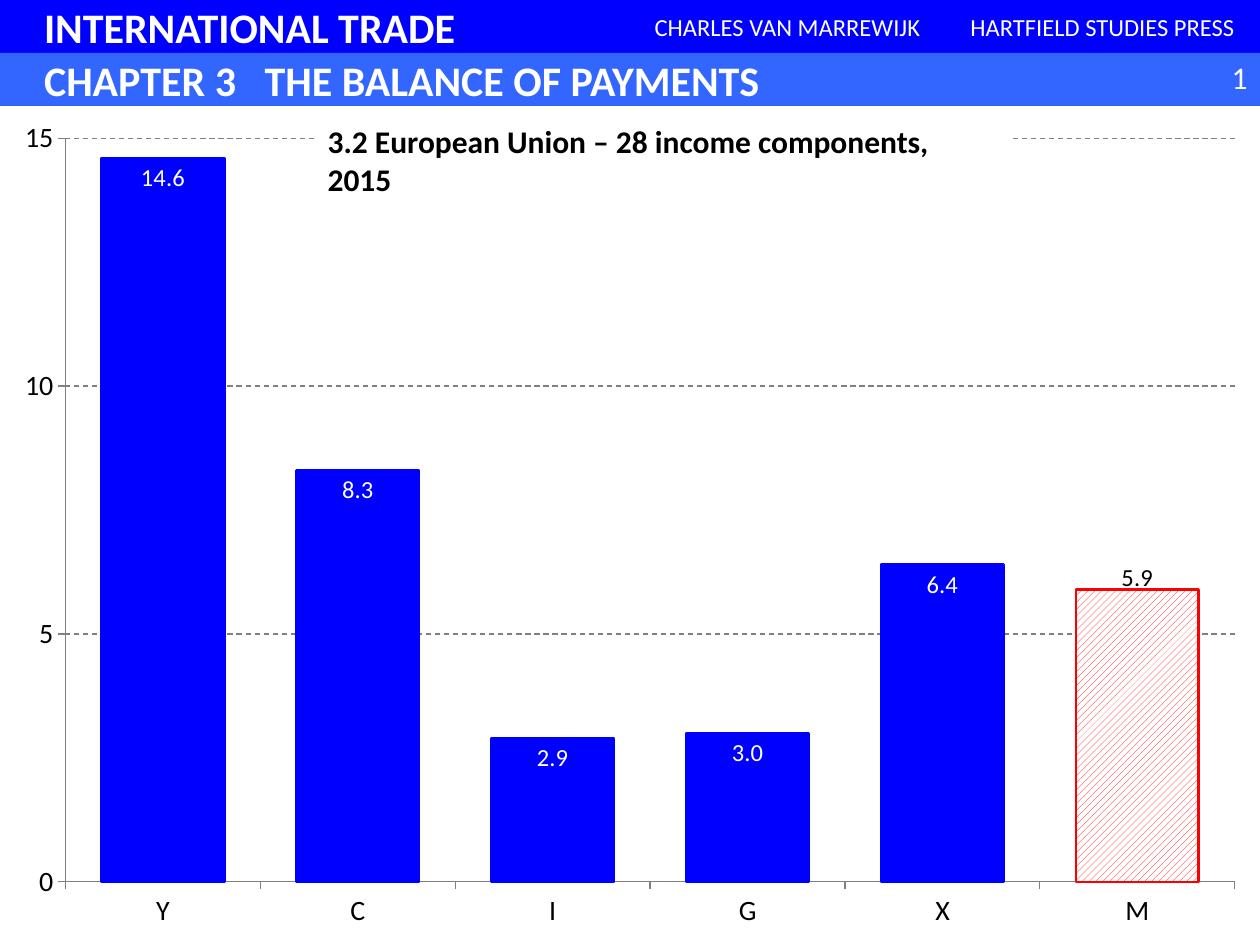
from dataclasses import dataclass

from pptx import Presentation
from pptx.chart.data import CategoryChartData
from pptx.dml.color import RGBColor as RGB
from pptx.enum.chart import XL_CHART_TYPE as Kind, XL_LABEL_POSITION as Pos
from pptx.enum.dml import MSO_LINE as Dash, MSO_PATTERN as Pattern
from pptx.enum.shapes import MSO_SHAPE as Shape
from pptx.enum.text import MSO_ANCHOR as Anchor, MSO_AUTO_SIZE as Fit, PP_ALIGN as Align
from pptx.oxml import parse_xml
from pptx.oxml.ns import nsdecls, qn
from pptx.util import Inches, Pt


@dataclass
class Theme:
    face: str = "Calibri"
    blue: RGB = RGB(0x00, 0x00, 0xFF)
    sky: RGB = RGB(0x33, 0x66, 0xFF)
    red: RGB = RGB(0xFF, 0x00, 0x00)
    white: RGB = RGB(0xFF, 0xFF, 0xFF)
    black: RGB = RGB(0x00, 0x00, 0x00)
    gray: RGB = RGB(0x80, 0x80, 0x80)
    head: Pt = Pt(24)
    title: Pt = Pt(18)
    axis: Pt = Pt(16)
    small: Pt = Pt(14)


theme = Theme()


def style(font, size, color, bold=False):
    font.name, font.size, font.bold = theme.face, size, bold
    font.color.rgb = color


def add_band(left, top, width, text, fill, size, bold, align, margin):
    band = slide.shapes.add_shape(
        Shape.RECTANGLE, Inches(left), Inches(top), Inches(width), Inches(0.42))
    band.shadow.inherit = False
    band.fill.solid()
    band.fill.fore_color.rgb = fill
    band.line.fill.background()
    frame = band.text_frame
    frame.text = text
    frame.vertical_anchor = Anchor.MIDDLE
    frame.margin_left = Inches(margin)
    para = frame.paragraphs[0]
    para.alignment = align
    style(para.runs[0].font, size, theme.white, bold)
    return para


deck = Presentation()
deck.slide_width, deck.slide_height = Inches(10), Inches(7.5)
slide = deck.slides.add_slide(deck.slide_layouts[5])

# Header bands
add_band(0, 0, 10, "INTERNATIONAL TRADE", theme.blue, theme.head, True, Align.LEFT, 0.35)
for left, name in ((5, "CHARLES VAN MARREWIJK"), (7.5, "HARTFIELD STUDIES PRESS")):
    add_band(left, 0, 2.5, name, theme.blue, theme.small, False, Align.CENTER, 0.1)
chapter = add_band(0, 0.42, 10, "CHAPTER 3\tTHE BALANCE OF PAYMENTS",
                   theme.sky, theme.head, True, Align.LEFT, 0.35)
tabs = parse_xml(f'<a:tabLst {nsdecls("a")}><a:tab pos="{Inches(1.75)}" algn="l"/></a:tabLst>')
chapter._p.get_or_add_pPr().append(tabs)

# Page number
page = slide.shapes.add_textbox(Inches(9.33), Inches(0.41), Inches(0.67), Inches(0.4))
page.text_frame.word_wrap = True
page.text_frame.text = "1"
para = page.text_frame.paragraphs[0]
para.alignment = Align.RIGHT
style(para.runs[0].font, theme.title, theme.white)

# Chart
data = CategoryChartData(number_format="#,##0.0")
data.categories = list("YCIGXM")
data.add_series("Series 1", (14.6, 8.3, 2.9, 3.0, 6.4, 5.9))
chart = slide.shapes.add_chart(
    Kind.COLUMN_CLUSTERED, Inches(0), Inches(0.83), Inches(10), Inches(6.67), data).chart
chart.has_legend = chart.has_title = False
style(chart.font, theme.small, theme.black)

# Axes and gridlines
for axis in (chart.category_axis, chart.value_axis):
    style(axis.tick_labels.font, theme.axis, theme.black)
    axis.format.line.color.rgb = theme.gray
    axis.format.line.width = Pt(0.75)
scale = chart.value_axis
scale.minimum_scale, scale.maximum_scale, scale.major_unit = 0, 15, 5
scale.tick_labels.number_format = "#,##0"
scale.tick_labels.number_format_is_linked = False
grid = scale.major_gridlines.format.line
grid.color.rgb, grid.width, grid.dash_style = theme.gray, Pt(0.75), Dash.DASH

# Columns and their labels
plot = chart.plots[0]
plot.gap_width = 59
plot.vary_by_categories = False
bars = plot.series[0]
bars.format.fill.solid()
bars.format.fill.fore_color.rgb = theme.blue
bars.format.line.color.rgb = theme.blue
bars.format.line.width = Pt(1.5)
labels = bars.data_labels
labels.show_value = True
labels.position = Pos.INSIDE_END
labels.number_format = "#,##0.0"
labels.number_format_is_linked = False
style(labels.font, theme.small, theme.white)

# Imports stand out as a hatched column
imports = bars.points[5]
hatch = imports.format.fill
hatch.patterned()
hatch.pattern = Pattern.WIDE_UPWARD_DIAGONAL
hatch.fore_color.rgb, hatch.back_color.rgb = theme.red, theme.white
imports.format.line.color.rgb = theme.red
imports.format.line.width = Pt(1.5)
style(imports.data_label.font, theme.small, theme.black)
imports.data_label.position = Pos.OUTSIDE_END

# Plot area and imports label, placed as fractions of the chart
area = chart.element.find(".//" + qn("c:plotArea"))
for old in area.findall(qn("c:layout")):
    area.remove(old)
label = area.find(".//" + qn("c:dLbl"))
inner = (("layoutTarget", "inner"), ("xMode", "edge"), ("yMode", "edge"),
         ("x", 0.052), ("y", 0.04), ("w", 0.928), ("h", 0.885))
for owner, index, items in ((area, 0, inner), (label, 1, (("x", 0), ("y", 0.01)))):
    sides = "".join(f'<c:{key} val="{value}"/>' for key, value in items)
    owner.insert(index, parse_xml(
        f'<c:layout {nsdecls("c")}><c:manualLayout>{sides}</c:manualLayout></c:layout>'))

# Title, in front of the chart
title = slide.shapes.title
title.left, title.top = Inches(2.5), Inches(0.92)
title.width, title.height = Inches(5.53), Inches(0.4)
title.fill.solid()
title.fill.fore_color.rgb = theme.white
frame = title.text_frame
frame.text = "3.2 European Union – 28 income components, 2015"
frame.word_wrap, frame.auto_size, frame.vertical_anchor = True, Fit.NONE, Anchor.TOP
frame.paragraphs[0].alignment = Align.LEFT
style(frame.paragraphs[0].runs[0].font, theme.title, theme.black, True)
title.element.getparent().append(title.element)

deck.save("out.pptx")
